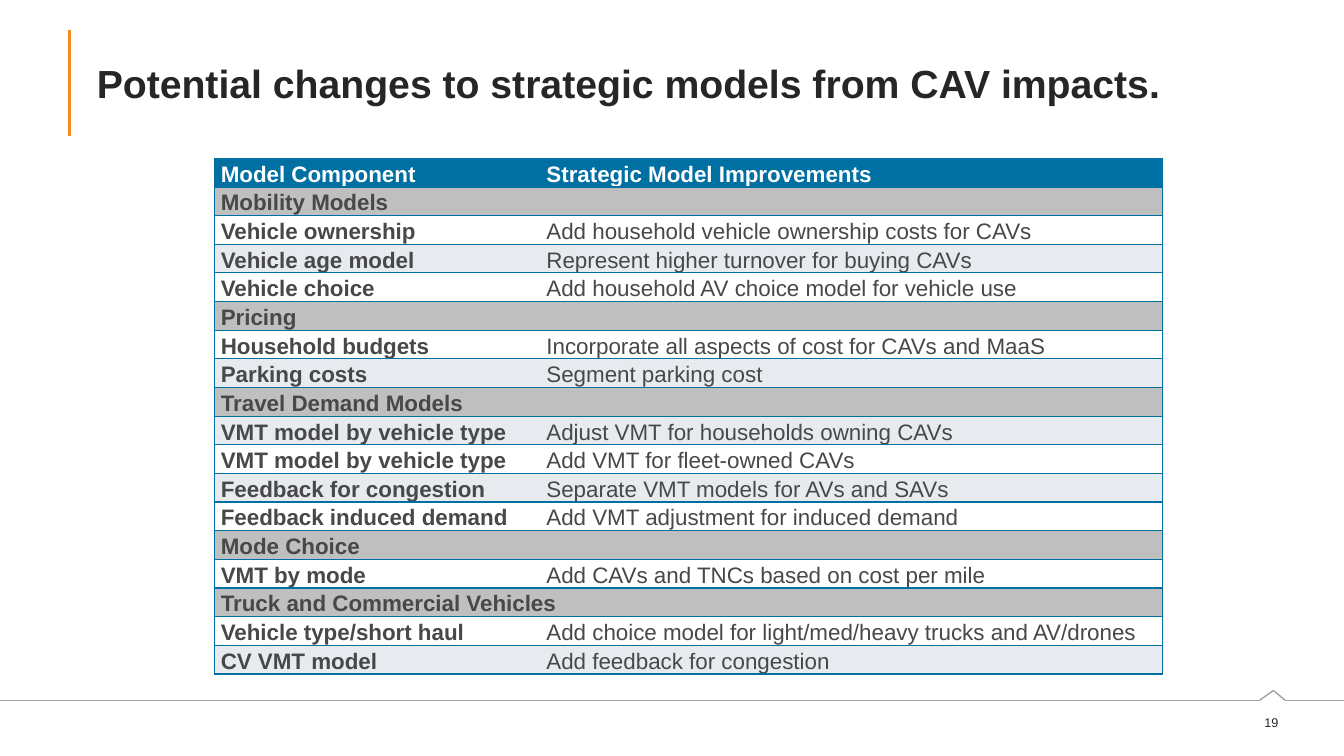
from itertools import pairwise
from lxml import etree
from pptx import Presentation
from pptx.dml.color import RGBColor
from pptx.enum.shapes import MSO_CONNECTOR
from pptx.enum.text import MSO_ANCHOR, MSO_AUTO_SIZE, PP_ALIGN
from pptx.oxml.ns import qn
from pptx.util import Inches, Pt

LINE = MSO_CONNECTOR.STRAIGHT
MIDDLE, TOP = MSO_ANCHOR.MIDDLE, MSO_ANCHOR.TOP
LEFT, CENTER = PP_ALIGN.LEFT, PP_ALIGN.CENTER
FIXED = MSO_AUTO_SIZE.NONE

ORANGE = RGBColor(0xF6, 0x8B, 0x1F)
SILVER = RGBColor(0xA3, 0xA3, 0xA5)
INK = RGBColor(0x26, 0x26, 0x26)
SLATE = RGBColor(0x48, 0x48, 0x4A)
BLUE = RGBColor(0x00, 0x6F, 0xA1)
GRAY = RGBColor(0xBF, 0xBF, 0xBF)
PALE = RGBColor(0xE7, 0xEB, 0xF0)
WHITE = RGBColor(0xFF, 0xFF, 0xFF)

WIDE, HIGH = 13.33, 7.5
COLS = (3.23, 6.17)
ROWS = [
    ("Model Component", "Strategic Model Improvements"),
    ("Mobility Models",),
    ("Vehicle ownership", "Add household vehicle ownership costs for CAVs"),
    ("Vehicle age model", "Represent higher turnover for buying CAVs"),
    ("Vehicle choice", "Add household AV choice model for vehicle use"),
    ("Pricing",),
    ("Household budgets", "Incorporate all aspects of cost for CAVs and MaaS"),
    ("Parking costs", "Segment parking cost"),
    ("Travel Demand Models",),
    ("VMT model by vehicle type", "Adjust VMT for households owning CAVs"),
    ("VMT model by vehicle type", "Add VMT for fleet-owned CAVs"),
    ("Feedback for congestion", "Separate VMT models for AVs and SAVs"),
    ("Feedback induced demand", "Add VMT adjustment for induced demand"),
    ("Mode Choice",),
    ("VMT by mode", "Add CAVs and TNCs based on cost per mile"),
    ("Truck and Commercial Vehicles",),
    ("Vehicle type/short haul", "Add choice model for light/med/heavy trucks and AV/drones"),
    ("CV VMT model", "Add feedback for congestion"),
]


def write(frame, text, size=16, color=SLATE, bold=False, align=LEFT, space=None):
    para = frame.paragraphs[0]
    para.alignment = align
    para.line_spacing = space
    run = para.add_run()
    run.text = text
    font = run.font
    font.name, font.size, font.bold = "Arial", Pt(size), bold
    font.color.rgb = color


def rule(shapes, start, end, color, width):
    line = shapes.add_connector(LINE, *map(Inches, start + end))
    line.line.color.rgb = color
    line.line.width = Pt(width)
    etree.SubElement(line._element.spPr, qn("a:effectLst"))


def edge(cell, sides):
    props = cell._tc.get_or_add_tcPr()
    for side in "LRTB":
        line = etree.SubElement(props, qn("a:ln" + side), w=str(Pt(1)))
        if side in sides:
            fill = etree.SubElement(line, qn("a:solidFill"))
            etree.SubElement(fill, qn("a:srgbClr"), val=str(BLUE))
        else:
            etree.SubElement(line, qn("a:noFill"))


def head(slide, left, top, width, height):
    rule(slide.shapes, (left, top), (left, top + height), ORANGE, 1.5)
    title = slide.shapes.title
    title.left, title.top = Inches(left + 0.17), Inches(top)
    title.width, title.height = Inches(width - 0.17), Inches(height)
    frame = title.text_frame
    frame.auto_size = FIXED
    frame.vertical_anchor = MIDDLE
    write(frame, "Potential changes to strategic models from CAV impacts.",
          size=28, color=INK, bold=True)


def grid(slide, left, top, width, height):
    shape = slide.shapes.add_table(
        len(ROWS), len(COLS), *map(Inches, (left, top, width, height)))
    table = shape.table
    for col, size in zip(table.columns, COLS):
        col.width = Inches(size)
    for i, texts in enumerate(ROWS):
        table.rows[i].height = Inches(height / len(ROWS))
        band = len(texts) == 1
        if i == 0:
            fill = BLUE
        elif band:
            fill = GRAY
        else:
            fill = PALE if i % 2 else WHITE
        for j, sides in enumerate(("LTB", "RTB")):
            cell = table.cell(i, j)
            edge(cell, "LRTB" if band else sides)
            cell.fill.solid()
            cell.fill.fore_color.rgb = fill
            cell.margin_left = cell.margin_right = Inches(0.06)
            cell.margin_top = 0
            cell.margin_bottom = Inches(-0.03)
            cell.vertical_anchor = TOP
        if band:
            table.cell(i, 0).merge(table.cell(i, 1))
        for j, text in enumerate(texts):
            write(table.cell(i, j).text_frame, text, space=1.15,
                  color=SLATE if i else WHITE, bold=i == 0 or j == 0)


def foot(slide, left, top, width, height):
    base = top + 0.1
    group = slide.shapes.add_group_shape()
    peak = left + width - 0.7
    points = [(left, base), (peak - 0.14, base), (peak, top),
              (peak + 0.12, base), (left + width, base)]
    for start, end in pairwise(points):
        rule(group.shapes, start, end, SILVER, 1)
    box = slide.shapes.add_textbox(
        *map(Inches, (peak - 0.3, base + 0.09, 0.56, 0.25)))
    frame = box.text_frame
    frame.word_wrap = True
    frame.vertical_anchor = MIDDLE
    write(frame, "19", size=9, color=INK, align=CENTER)


def main():
    deck = Presentation()
    deck.slide_width, deck.slide_height = Inches(WIDE), Inches(HIGH)
    slide = deck.slides.add_slide(deck.slide_layouts[5])
    head(slide, 0.69, 0.3, 11.97, 1.05)
    foot(slide, 0, 6.85, WIDE, HIGH - 6.85)
    grid(slide, 2.13, 1.57, sum(COLS), 5.12)
    deck.save("out.pptx")


if __name__ == "__main__":
    main()
